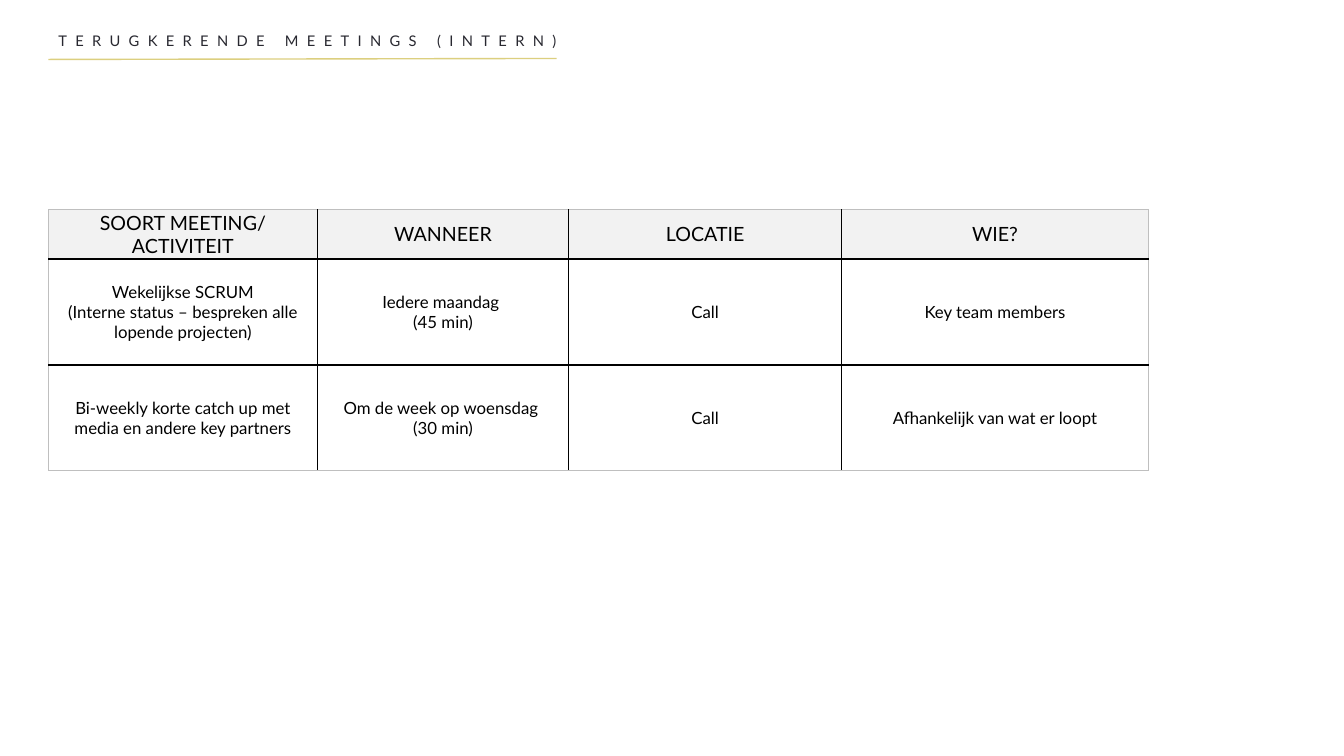
from lxml import etree
from pptx import Presentation
from pptx.dml.color import RGBColor
from pptx.enum.shapes import MSO_CONNECTOR
from pptx.enum.text import MSO_ANCHOR, PP_ALIGN
from pptx.oxml.ns import qn
from pptx.util import Inches, Pt

STRAIGHT = MSO_CONNECTOR.STRAIGHT
MIDDLE = MSO_ANCHOR.MIDDLE
CENTER = PP_ALIGN.CENTER

FONT = "Lato"
COLORS = {
    "title": "282830",
    "gold": "DCCF7F",
    "text": "000000",
    "header": "F2F2F2",
    "grid": "000000",
    "frame": "BFBFBF",
}

COL_WIDTHS = [2.67, 2.49, 2.71, 3.04]
ROW_HEIGHTS = [0.49, 1.05, 1.05]
# Each cell is a list of paragraphs.
MEETINGS = [
    [["SOORT MEETING/ ACTIVITEIT"], ["WANNEER"], ["LOCATIE"], ["WIE?"]],
    [
        ["Wekelijkse SCRUM", "(Interne status – bespreken alle lopende projecten)"],
        ["Iedere maandag ", "(45 min)"],
        ["Call"],
        ["Key team members"],
    ],
    [
        ["Bi-weekly korte catch up met media en andere key partners"],
        ["Om de week op woensdag ", "(30 min)"],
        ["Call"],
        ["Afhankelijk van wat er loopt"],
    ],
]


def rgb(name):
    return RGBColor.from_string(COLORS[name])


class SlideBuilder:
    def __init__(self, slide):
        self.s = slide

    def run(self, p, text, size, color):
        r = p.add_run()
        r.text = text
        r.font.name = FONT
        r.font.size = Pt(size)
        r.font.color.rgb = rgb(color)
        return r

    def title(self, text, x, y, w, h):
        sp = self.s.shapes.add_textbox(Inches(x), Inches(y), Inches(w), Inches(h))
        tf = sp.text_frame
        tf.word_wrap = True
        p = tf.paragraphs[0]
        p.line_spacing = 0.9
        r = self.run(p, text, 10.5, "title")
        r.font._element.set("spc", "600")

    def line(self, x1, y1, x2, y2, color, width):
        sp = self.s.shapes.add_connector(
            STRAIGHT, Inches(x1), Inches(y1), Inches(x2), Inches(y2))
        sp.line.color.rgb = rgb(color)
        sp.line.width = Pt(width)
        etree.SubElement(sp._element.spPr, qn("a:effectLst"))

    def border(self, cell, side, color, width):
        ln = etree.SubElement(cell._tc.get_or_add_tcPr(), qn(f"a:ln{side}"),
                              w=str(Pt(width)))
        fill = etree.SubElement(ln, qn("a:solidFill"))
        etree.SubElement(fill, qn("a:srgbClr"), val=COLORS[color])

    def cell(self, cell, paragraphs, header, borders):
        for side, (color, width) in borders.items():
            self.border(cell, side, color, width)
        if header:
            cell.fill.solid()
            cell.fill.fore_color.rgb = rgb("header")
        else:
            cell.fill.background()
        cell.vertical_anchor = MIDDLE
        cell.margin_left = cell.margin_right = Inches(0.04)
        cell.margin_top = cell.margin_bottom = Inches(0.01)
        tf = cell.text_frame
        for i, text in enumerate(paragraphs):
            p = tf.add_paragraph() if i else tf.paragraphs[0]
            p.alignment = CENTER
            self.run(p, text, 14 if header else 12, "text")

    def table(self, rows, x, y, widths, heights):
        """Black rules inside, a thin grey frame around."""
        table = self.s.shapes.add_table(
            len(heights), len(widths), Inches(x), Inches(y),
            Inches(sum(widths)), Inches(sum(heights))).table
        table.first_row = table.horz_banding = False
        for column, width in zip(table.columns, widths):
            column.width = Inches(width)
        for row, height in zip(table.rows, heights):
            row.height = Inches(height)

        frame, rule, row_rule = ("frame", 0.5), ("grid", 1), ("grid", 1.5)
        across = [frame, rule] + [row_rule] * (len(heights) - 2) + [frame]
        down = [frame] + [rule] * (len(widths) - 1) + [frame]
        for i, row in enumerate(rows):
            for j, paragraphs in enumerate(row):
                borders = {"L": down[j], "R": down[j + 1],
                           "T": across[i], "B": across[i + 1]}
                self.cell(table.cell(i, j), paragraphs, i == 0, borders)


def main():
    prs = Presentation()
    prs.slide_width, prs.slide_height = Inches(13.33), Inches(7.5)
    slide = SlideBuilder(prs.slides.add_slide(prs.slide_layouts[6]))
    slide.title("TERUGKERENDE MEETINGS (INTERN)", 0.48, 0.29, 7.73, 0.27)
    slide.line(0.48, 0.59, 5.52, 0.58, "gold", 1)
    slide.table(MEETINGS, 0.48, 2.08, COL_WIDTHS, ROW_HEIGHTS)
    prs.save("out.pptx")


if __name__ == "__main__":
    main()
